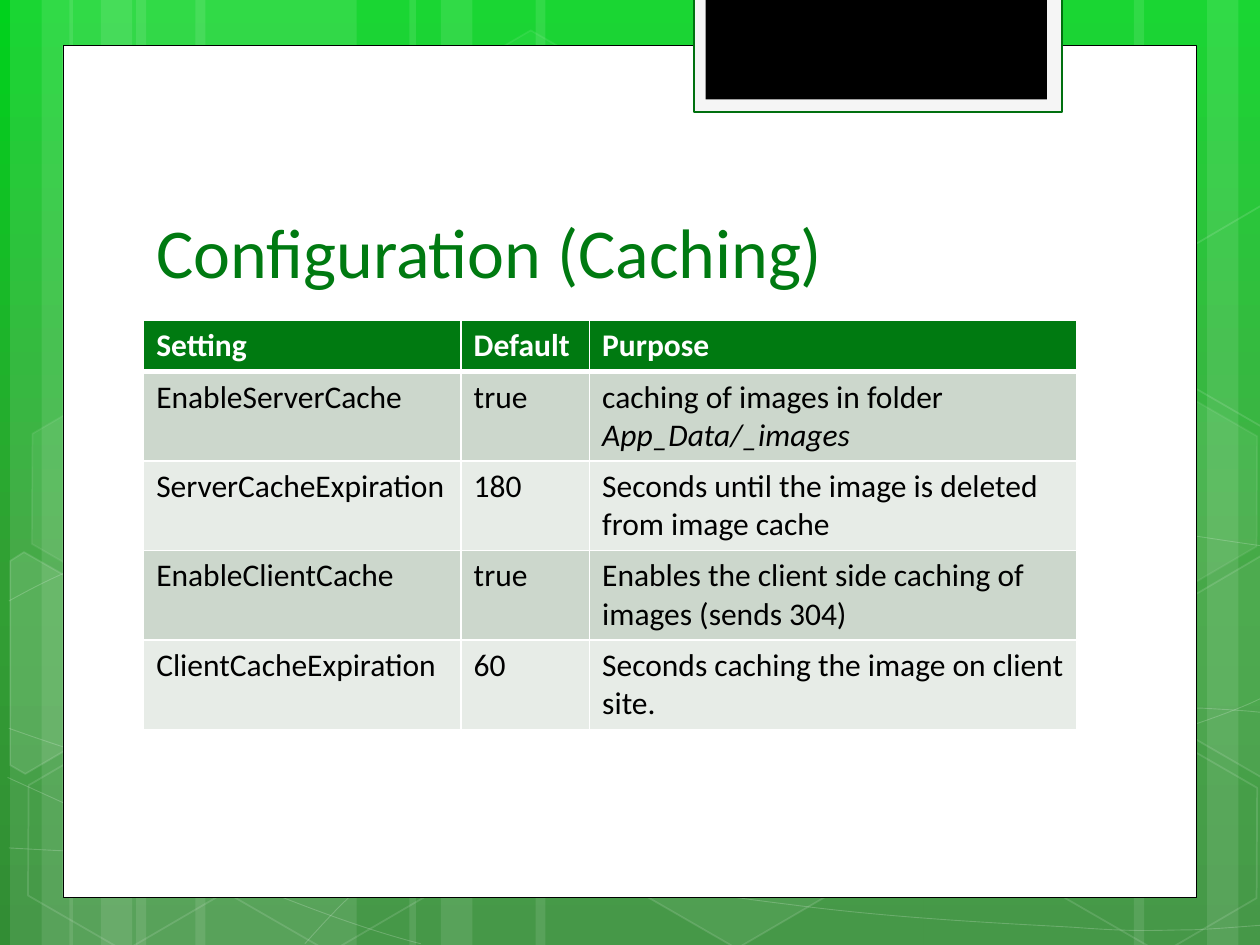
from copy import deepcopy
from math import cos, radians, sin

from lxml.etree import SubElement
from pptx import Presentation
from pptx.dml.color import RGBColor
from pptx.enum.shapes import MSO_SHAPE as Shape
from pptx.enum.text import MSO_ANCHOR as Anchor
from pptx.oxml.ns import qn
from pptx.util import Inches, Pt

WHITE = RGBColor(0xFF, 0xFF, 0xFF)
BLACK = RGBColor(0, 0, 0)
GREEN = RGBColor(0x00, 0x7A, 0x11)
TAB_EDGE = RGBColor(0x00, 0x70, 0x0F)
TAB_FILL = RGBColor(0xF5, 0xF5, 0xF5)
ROW_FILLS = RGBColor(0xCC, 0xD7, 0xCC), RGBColor(0xE7, 0xEC, 0xE7)
BACKGROUND = (
    (0, RGBColor(0x00, 0xD2, 0x1C)),
    (0.62, RGBColor(0x32, 0x9F, 0x34)),
    (1, RGBColor(0x32, 0x8D, 0x34)),
)
FONT = "Calibri"
TILT = 30

STRIPES = [
    (1.08, 1.75), (0.08, 0.5), (0.33, 0.83), (1.55, 1.75), (0.55, 0.5), (0.8, 0.83),
    (7.33, 1.75), (9.58, 0.5), (9, 0.83), (4.25, 3.08), (3.25, 0.5), (3.5, 0.83),
]
CURVES = [
    [(0.07, 6.73), (0.61, 6.76), (1.15, 6.79), (1.9, 6.78), (2.65, 6.77), (3.58, 6.75),
     (4.58, 6.65), (5.58, 6.55), (7, 6.36), (7.92, 6.17), (8.83, 5.98), (9.77, 5.68),
     (10.07, 5.51)],
    [(0.07, 4.77), (0.36, 4.61), (0.65, 4.46), (1.21, 4.31), (1.78, 4.16), (2.59, 3.94),
     (3.47, 3.87), (4.36, 3.8), (5.44, 3.79), (6.54, 3.87), (7.64, 3.95), (9.47, 4.26),
     (10.07, 4.34)],
    [(0.06, 6.17), (1.27, 6.72), (2.47, 7.27), (3.34, 7.49)],
    [(0.07, 5.78), (0.38, 5.89), (0.7, 6), (1.28, 6.16), (1.86, 6.31), (2.73, 6.56),
     (3.57, 6.73), (4.4, 6.9), (5.45, 7.08), (6.28, 7.18), (7.11, 7.29), (8, 7.33),
     (8.53, 7.36), (9.05, 7.4), (9.19, 7.38), (9.45, 7.38), (9.71, 7.37), (9.89, 7.35),
     (10.07, 7.34)],
    [(2.42, 7.49), (2.6, 7.29), (2.78, 7.09), (3.02, 6.91), (3.26, 6.73), (3.6, 6.53),
     (3.88, 6.39), (4.16, 6.25), (4.33, 6.19), (4.7, 6.09), (5.06, 5.99), (5.73, 5.85),
     (6.08, 5.78), (6.44, 5.71), (6.49, 5.71), (6.8, 5.69), (7.11, 5.66), (7.6, 5.63),
     (7.94, 5.62), (8.29, 5.61), (8.86, 5.62), (8.86, 5.62), (9.08, 5.62), (9.3, 5.62),
     (9.53, 5.62), (9.71, 5.63), (9.88, 5.64), (9.97, 5.65), (10.06, 5.66), (10.03, 5.65),
     (10.06, 5.66)],
]
HEXAGONS = [
    (3.34, 0.36, 4, 8), (4.97, 5.89, 6, 12), (0.11, 5.91, None, 12),
    (0.14, 3.12, 7, 8), (1.74, 5.92, None, 12), (7.53, 4.53, 10, 12),
    (8.34, 5.93, None, 12), (8.34, 3.14, 7, 8),
]
CUT_HEXAGONS = [
    ((0.36, 5.35), 10, [(0.08, 4.45), (0.19, 4.38), (0.96, 4.82), (0.95, 5.7),
                        (0.2, 6.14), (0.08, 6.07)]),
    ((9.85, 5.2), 4, [(9.26, 4.85), (10.01, 4.41), (10.09, 4.46), (10.09, 6.13),
                      (10.02, 6.17), (9.26, 5.73)]),
    ((9.85, 2.41), None, [(9.26, 2.07), (10.01, 1.63), (10.1, 1.68), (10.09, 3.35),
                          (10.02, 3.39), (9.26, 2.95)]),
]
COLUMN_WIDTHS = [2.52, 1.02, 3.87]
ROW_HEIGHTS = [0.41] + [0.71] * 4
SETTINGS = [
    ("Setting", "Default", "Purpose"),
    ("EnableServerCache", "true", "caching of images in folder |App_Data/_images"),
    ("ServerCacheExpiration", "180", "Seconds until the image is deleted from image cache"),
    ("EnableClientCache", "true", "Enables the client side caching of images (sends 304)"),
    ("ClientCacheExpiration", "60", "Seconds caching the image on client site."),
]


def paint_background(page):
    fill = page.background.fill
    fill.gradient()
    fill.gradient_angle = 270
    first = fill.gradient_stops[0]._gs
    first.addnext(deepcopy(first))
    for stop, (position, color) in zip(fill.gradient_stops, BACKGROUND):
        stop.position = position
        stop.color.rgb = color


def style(shape, fill=None, line=None, width=1, fill_alpha=None, line_alpha=None):
    shape.shadow.inherit = False
    parts = ((shape.fill, fill, fill_alpha, "a:solidFill"),
             (shape.line.fill, line, line_alpha, "a:ln/a:solidFill"))
    for part, color, alpha, tag in parts:
        if color is None:
            part.background()
            continue
        part.solid()
        part.fore_color.rgb = color
        if alpha:
            route = "/".join(qn(name) for name in f"{tag}/a:srgbClr".split("/"))
            node = shape.element.spPr.find(route)
            SubElement(node, qn("a:alpha")).set("val", str(alpha * 1000))
    if line is not None:
        shape.line.width = Pt(width)


def add_block(page, kind, frame, **look):
    shape = page.shapes.add_shape(kind, *map(Inches, frame))
    style(shape, **look)
    return shape


def add_outline(page, points, close, **look):
    corners = [(Inches(x), Inches(y)) for x, y in points]
    builder = page.shapes.build_freeform(*corners[0])
    builder.add_line_segments(corners[1:], close=close)
    shape = builder.convert_to_shape()
    style(shape, **look)
    return shape


def add_curve(page, points):
    shape = add_outline(page, points, False, line=WHITE, width=0.5, line_alpha=20)
    segments = list(shape.element.spPr.iter(qn("a:lnTo")))
    for start in range(0, len(segments), 3):
        bezier, *others = segments[start:start + 3]
        bezier.tag = qn("a:cubicBezTo")
        for segment in others:
            bezier.append(segment[0])
            segment.getparent().remove(segment)


def add_cut_hexagon(page, center, alpha, points):
    cosine, sine = cos(radians(TILT)), sin(radians(TILT))
    middle_x, middle_y = center
    upright = [(middle_x + (x - middle_x) * cosine + (y - middle_y) * sine,
                middle_y + (y - middle_y) * cosine - (x - middle_x) * sine)
               for x, y in points]
    shape = add_outline(page, upright, True, fill=WHITE if alpha else None,
                        fill_alpha=alpha, line=WHITE, line_alpha=12)
    shape.rotation = TILT


def add_span(para, text, size, color, bold=False, italic=False):
    span = para.add_run()
    span.text = text
    font = span.font
    font.name, font.size, font.bold, font.italic = FONT, Pt(size), bold, italic
    font.color.rgb = color


def add_decoration(page):
    for left, width in STRIPES:
        add_block(page, Shape.RECTANGLE, (left, 0, width, 7.5), fill=WHITE, fill_alpha=10)
    for points in CURVES:
        add_curve(page, points)
    for left, top, alpha, line_alpha in HEXAGONS:
        hexagon = add_block(page, Shape.HEXAGON, (left, top, 1.75, 1.52),
                            fill=WHITE if alpha else None, fill_alpha=alpha,
                            line=WHITE, line_alpha=line_alpha)
        hexagon.adjustments[0] = 0.285
        hexagon.rotation = TILT
    for center, alpha, points in CUT_HEXAGONS:
        add_cut_hexagon(page, center, alpha, points)


def add_panel(page):
    add_block(page, Shape.RECTANGLE, (0.5, 0.36, 9, 6.76), fill=WHITE, line=BLACK, width=0.5)
    add_block(page, Shape.RECTANGLE, (5.51, -0.02, 2.92, 0.91),
              fill=TAB_FILL, line=TAB_EDGE, width=1.25)
    add_block(page, Shape.RECTANGLE, (5.6, -0.02, 2.71, 0.81), fill=BLACK)


def add_title(page, text):
    box = page.shapes.add_textbox(Inches(1.14), Inches(1.12), Inches(7.68), Inches(1.25))
    frame = box.text_frame
    frame.word_wrap = True
    frame.vertical_anchor = Anchor.BOTTOM
    add_span(frame.paragraphs[0], text, 40, GREEN)


def set_borders(cell, widths):
    properties = cell._tc.get_or_add_tcPr()
    for side, width in widths.items():
        border = SubElement(properties, qn(f"a:ln{side}"), w=str(Pt(width)))
        fill = SubElement(border, qn("a:solidFill"))
        SubElement(fill, qn("a:srgbClr"), val=str(WHITE))


def add_settings_table(page):
    frame = page.shapes.add_table(len(SETTINGS), len(COLUMN_WIDTHS), Inches(1.14), Inches(2.54),
                                  Inches(sum(COLUMN_WIDTHS)), Inches(sum(ROW_HEIGHTS)))
    table = frame.table
    for column, width in zip(table.columns, COLUMN_WIDTHS):
        column.width = Inches(width)
    for index, (values, height) in enumerate(zip(SETTINGS, ROW_HEIGHTS)):
        table.rows[index].height = Inches(height)
        header = index == 0
        for cell, value in zip(table.rows[index].cells, values):
            set_borders(cell, {"L": 1, "R": 1, "T": 3 if index == 1 else 1,
                               "B": 3 if header else 1})
            cell.fill.solid()
            cell.fill.fore_color.rgb = GREEN if header else ROW_FILLS[(index - 1) % 2]
            para = cell.text_frame.paragraphs[0]
            for order, text in enumerate(value.split("|")):
                add_span(para, text, 18, WHITE if header else BLACK,
                         bold=header, italic=order == 1)


def main():
    deck = Presentation()
    deck.slide_width, deck.slide_height = Inches(10), Inches(7.5)
    page = deck.slides.add_slide(deck.slide_layouts[6])
    paint_background(page)
    add_decoration(page)
    add_panel(page)
    add_title(page, "Configuration (Caching)")
    add_settings_table(page)
    deck.save("out.pptx")


if __name__ == "__main__":
    main()
